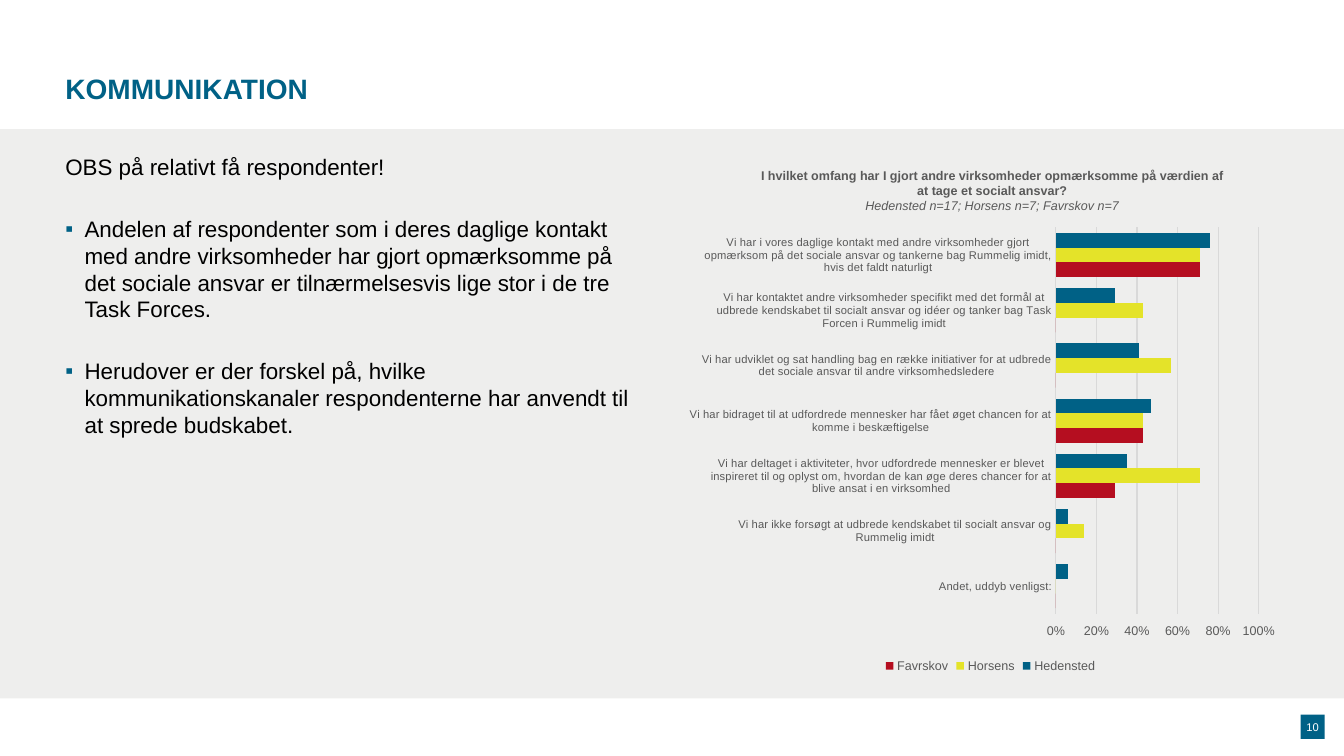
from dataclasses import dataclass
from typing import Any

import pptx
import pptx.chart.data
import pptx.dml.color
import pptx.enum.chart
import pptx.enum.shapes
import pptx.enum.text
import pptx.oxml
import pptx.oxml.ns
import pptx.util

SLIDE_WIDTH = pptx.util.Inches(13.33)
SLIDE_HEIGHT = pptx.util.Inches(7.5)
FONT_NAME = "Arial"
BLUE, YELLOW, RED = "006186", "E4E329", "B50E20"
BLACK, WHITE, PANEL_GREY = "000000", "FFFFFF", "EEEEED"
TEXT_GREY, LINE_GREY = "595959", "D9D9D9"


@dataclass(frozen=True)
class Area:
    """Left, top, width and height in percent of the slide."""
    left: float
    top: float
    width: float
    height: float

    def lengths(self) -> tuple[int, int, int, int]:
        return (int(SLIDE_WIDTH * self.left / 100), int(SLIDE_HEIGHT * self.top / 100),
                int(SLIDE_WIDTH * self.width / 100), int(SLIDE_HEIGHT * self.height / 100))


@dataclass(frozen=True)
class Line:
    text: str
    size: float
    color: str
    bold: bool = False
    italic: bool = False
    bullet: bool = False
    space_before: float = 0
    centered: bool = False


@dataclass(frozen=True)
class Municipality:
    name: str
    color: str
    shares: tuple[float, ...]


COLUMN_WIDTH, CONTENT_TOP, CONTENT_HEIGHT = 44.56, 19.6, 70
LEFT_COLUMN, RIGHT_COLUMN = 4.13, 51.31
PANEL = Area(0, 17.07, 100, 75.33)
PAGE_NUMBER = Area(96.77, 94.53, 1.8, 3.2)
HEADING = Area(LEFT_COLUMN, 8.8, 91.75, 7.47)
BODY = Area(LEFT_COLUMN, CONTENT_TOP, COLUMN_WIDTH, CONTENT_HEIGHT)
CHART = Area(RIGHT_COLUMN, CONTENT_TOP, COLUMN_WIDTH, CONTENT_HEIGHT)

HEADING_LINES = [Line("KOMMUNIKATION", 20, BLUE, bold=True)]
BODY_LINES = [
    Line("OBS på relativt få respondenter!", 16, BLACK),
    Line("Andelen af respondenter som i deres daglige kontakt med andre virksomheder har gjort "
         "opmærksomme på det sociale ansvar er tilnærmelsesvis lige stor i de tre Task Forces.",
         16, BLACK, bullet=True, space_before=25),
    Line("Herudover er der forskel på, hvilke kommunikationskanaler respondenterne har anvendt "
         "til at sprede budskabet.",
         16, BLACK, bullet=True, space_before=25),
]
CHART_TITLE_LINES = [
    Line("I hvilket omfang har I gjort andre virksomheder opmærksomme på værdien af at tage et "
         "socialt ansvar?", 9, TEXT_GREY, bold=True, centered=True),
    Line("Hedensted n=17; Horsens n=7; Favrskov n=7", 9, TEXT_GREY, italic=True, centered=True),
]
ANSWERS = [
    "Vi har i vores daglige kontakt med andre virksomheder gjort opmærksom på det sociale "
    "ansvar og tankerne bag Rummelig imidt, hvis det faldt naturligt",
    "Vi har kontaktet andre virksomheder specifikt med det formål at udbrede kendskabet til "
    "socialt ansvar og idéer og tanker bag Task Forcen i Rummelig imidt",
    "Vi har udviklet og sat handling bag en række initiativer for at udbrede det sociale "
    "ansvar til andre virksomhedsledere",
    "Vi har bidraget til at udfordrede mennesker har fået øget chancen for at komme i "
    "beskæftigelse",
    "Vi har deltaget i aktiviteter, hvor udfordrede mennesker er blevet inspireret til og "
    "oplyst om, hvordan de kan øge deres chancer for at blive ansat i en virksomhed",
    "Vi har ikke forsøgt at udbrede kendskabet til socialt ansvar og Rummelig imidt",
    "Andet, uddyb venligst:",
]
MUNICIPALITIES = [
    Municipality("Hedensted", BLUE, (0.76, 0.29, 0.41, 0.47, 0.35, 0.06, 0.06)),
    Municipality("Horsens", YELLOW, (0.71, 0.43, 0.57, 0.43, 0.71, 0.14, 0)),
    Municipality("Favrskov", RED, (0.71, 0, 0, 0.43, 0.29, 0, 0)),
]


def color_of(value: str) -> pptx.dml.color.RGBColor:
    return pptx.dml.color.RGBColor.from_string(value)


def apply_format(target: Any, values: dict[str, Any]) -> None:
    for name, value in values.items():
        setattr(target, name, value)


def format_font(font: Any, size: float, color: str, bold: bool = False, italic: bool = False) -> None:
    apply_format(font, {"name": FONT_NAME, "size": pptx.util.Pt(size), "bold": bold, "italic": italic})
    font.color.rgb = color_of(color)


def add_bullet(paragraph: Any) -> None:
    properties = paragraph._p.get_or_add_pPr()
    indent = pptx.util.Inches(0.19)
    properties.set("marL", str(indent))
    properties.set("indent", str(-indent))
    namespace = pptx.oxml.ns.nsdecls("a")
    for element in (f'<a:buClr {namespace}><a:srgbClr val="{BLUE}"/></a:buClr>',
                    f'<a:buFont {namespace} typeface="{FONT_NAME}"/>',
                    f'<a:buChar {namespace} char="▪"/>'):
        properties.append(pptx.oxml.parse_xml(element))


def write_lines(text_frame: Any, lines: list[Line]) -> None:
    alignment = pptx.enum.text.PP_ALIGN
    for index, line in enumerate(lines):
        paragraph = text_frame.add_paragraph() if index else text_frame.paragraphs[0]
        apply_format(paragraph, {
            "alignment": alignment.CENTER if line.centered else alignment.LEFT,
            "space_before": pptx.util.Pt(line.space_before),
        })
        if line.bullet:
            add_bullet(paragraph)
        run = paragraph.add_run()
        run.text = line.text
        format_font(run.font, line.size, line.color, line.bold, line.italic)


def add_rectangle(slide: Any, area: Area, color: str) -> Any:
    shape = slide.shapes.add_shape(pptx.enum.shapes.MSO_SHAPE.RECTANGLE, *area.lengths())
    shape.shadow.inherit = False
    shape.fill.solid()
    shape.fill.fore_color.rgb = color_of(color)
    shape.line.fill.background()
    return shape


def add_text(slide: Any, area: Area, lines: list[Line]) -> None:
    text_frame = slide.shapes.add_textbox(*area.lengths()).text_frame
    text_frame.word_wrap = True
    write_lines(text_frame, lines)


def place_part(element: Any, position: int, inner: bool, shares: dict[str, float]) -> None:
    for layout in element.xpath("c:layout"):
        element.remove(layout)
    target = '<c:layoutTarget val="inner"/>' if inner else ""
    modes = '<c:xMode val="edge"/><c:yMode val="edge"/>'
    values = "".join(f'<c:{name} val="{share}"/>' for name, share in shares.items())
    element.insert(position, pptx.oxml.parse_xml(
        f'<c:layout {pptx.oxml.ns.nsdecls("c")}><c:manualLayout>{target}{modes}{values}'
        "</c:manualLayout></c:layout>"))


def add_answer_chart(slide: Any, area: Area) -> None:
    chart_enums = pptx.enum.chart
    data = pptx.chart.data.CategoryChartData(number_format="0%")
    data.categories = ANSWERS
    for municipality in MUNICIPALITIES:
        data.add_series(municipality.name, municipality.shares)
    chart = slide.shapes.add_chart(
        chart_enums.XL_CHART_TYPE.BAR_CLUSTERED, *area.lengths(), data).chart
    format_font(chart.font, 10, BLACK)
    write_lines(chart.chart_title.text_frame, CHART_TITLE_LINES)
    apply_format(chart, {"has_title": True, "has_legend": True})
    apply_format(chart.legend, {"position": chart_enums.XL_LEGEND_POSITION.BOTTOM,
                                "include_in_layout": False})
    format_font(chart.legend.font, 9, TEXT_GREY)

    plot = chart.plots[0]
    apply_format(plot, {"gap_width": 75, "overlap": 0, "vary_by_categories": False})
    for series, municipality in zip(plot.series, MUNICIPALITIES):
        series.invert_if_negative = False
        series.format.fill.solid()
        series.format.fill.fore_color.rgb = color_of(municipality.color)

    no_ticks = {"major_tick_mark": chart_enums.XL_TICK_MARK.NONE,
                "minor_tick_mark": chart_enums.XL_TICK_MARK.NONE}
    answers, shares = chart.category_axis, chart.value_axis
    apply_format(answers, no_ticks | {"reverse_order": True, "has_major_gridlines": False})
    apply_format(shares, no_ticks | {"minimum_scale": 0, "maximum_scale": 1, "major_unit": 0.2,
                                     "has_major_gridlines": True,
                                     "tick_label_position": chart_enums.XL_TICK_LABEL_POSITION.HIGH})
    apply_format(shares.tick_labels, {"number_format": "0%", "number_format_is_linked": False})
    format_font(answers.tick_labels.font, 8, TEXT_GREY)
    format_font(shares.tick_labels.font, 9, TEXT_GREY)
    for line in (answers.format.line, shares.major_gridlines.format.line):
        line.width = pptx.util.Pt(0.75)
        line.color.rgb = color_of(LINE_GREY)
    shares.format.line.fill.background()

    chart_space = chart._chartSpace
    place_part(chart_space.xpath("c:chart/c:title")[0], 1, False, {"x": 0.11, "y": 0.03})
    place_part(chart_space.xpath("c:chart/c:plotArea")[0], 0, True,
               {"x": 0.61, "y": 0.15, "w": 0.34, "h": 0.73})


def main() -> None:
    presentation = pptx.Presentation()
    apply_format(presentation, {"slide_width": SLIDE_WIDTH, "slide_height": SLIDE_HEIGHT})
    slide = presentation.slides.add_slide(presentation.slide_layouts[6])
    add_rectangle(slide, PANEL, PANEL_GREY)
    number_frame = add_rectangle(slide, PAGE_NUMBER, BLUE).text_frame
    apply_format(number_frame, dict.fromkeys(
        ("margin_left", "margin_top", "margin_right", "margin_bottom"), 0))
    number_frame.vertical_anchor = pptx.enum.text.MSO_ANCHOR.MIDDLE
    write_lines(number_frame, [Line("10", 8, WHITE, centered=True)])
    add_text(slide, HEADING, HEADING_LINES)
    add_text(slide, BODY, BODY_LINES)
    add_answer_chart(slide, CHART)
    presentation.save("out.pptx")


if __name__ == "__main__":
    main()
